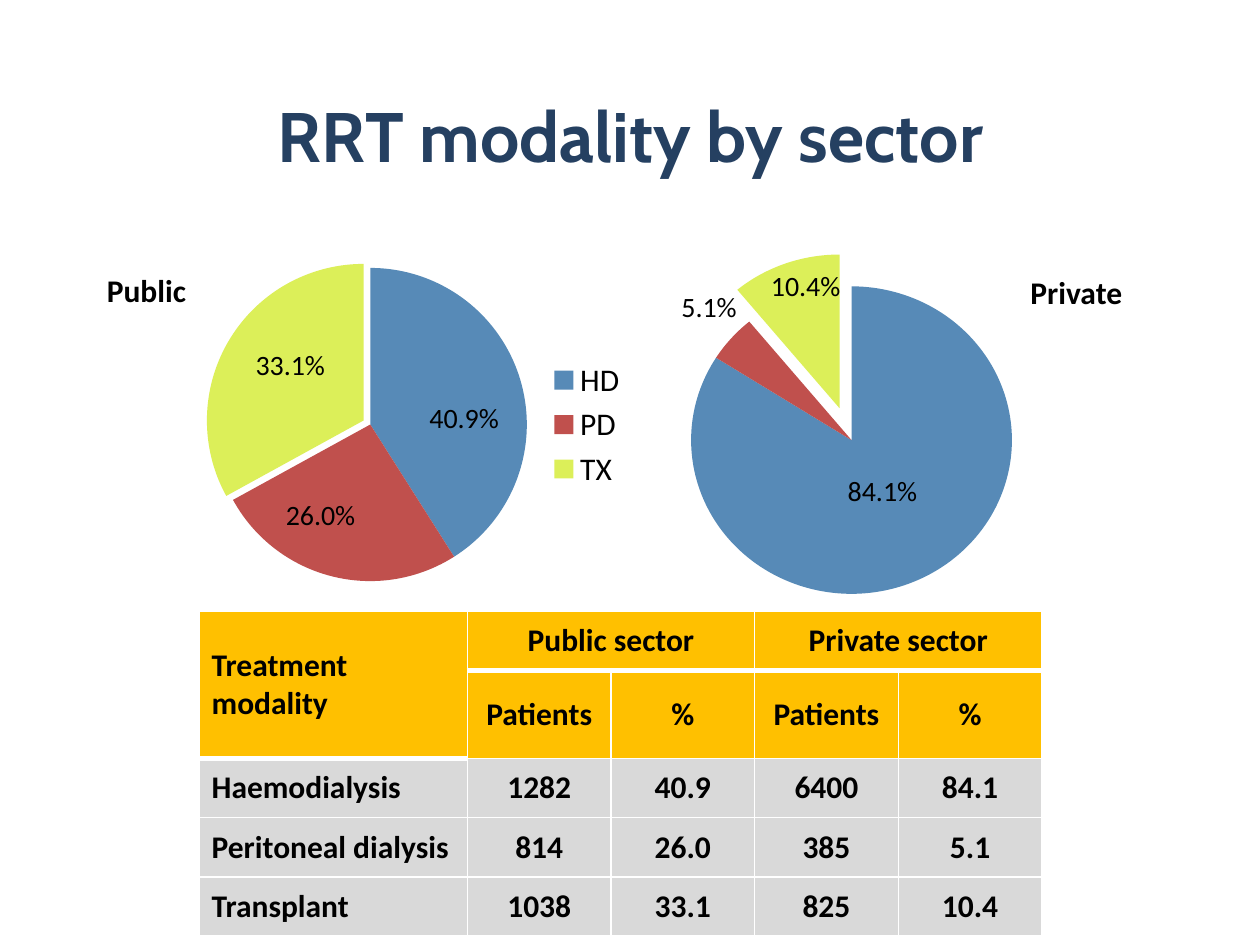
from lxml.etree import SubElement
from pptx import Presentation
from pptx.chart.data import CategoryChartData
from pptx.dml.color import RGBColor
from pptx.enum.chart import XL_CHART_TYPE as ChartType, XL_LEGEND_POSITION as LegendPosition
from pptx.enum.text import MSO_ANCHOR as Anchor, PP_ALIGN as Align
from pptx.oxml import parse_xml
from pptx.oxml.ns import nsdecls, qn
from pptx.util import Inches, Pt

TITLE = "RRT modality by sector"
MODALITIES = ["HD", "PD", "TX"]
SLICE_COLOURS = ["578AB7", "C0504D", "DCEF59"]
PIES = [
    dict(categories=MODALITIES, values=[41, 26, 33], place=(1.54, 1.15, 3.54, 4.44),
         plot=(0.04, 0.22, 0.71, 0.56), explosion=5, legend=True),
    dict(categories=["1", "2", "3"], values=[84, 5, 11], place=(5.16, 2.02, 3.23, 2.83),
         plot=(0.1, 0.05, 0.79, 0.9), explosion=22, legend=False),
]
SECTOR_LABELS = [("Public", 0.75, 2.1, 0.83), ("Private", 8.08, 2.12, 0.94)]
SHARE_LABELS = [
    ("33.1%", 1.93, 2.71, 0.76), ("40.9%", 3.31, 3.13, 0.76), ("26.0%", 2.17, 3.9, 0.76),
    ("10.4%", 6.02, 2.08, 0.76), ("84.1%", 6.63, 3.71, 0.76), ("5.1%", 5.31, 2.25, 0.65),
]
TABLE = [
    ["Treatment modality", "Public sector", "", "Private sector", ""],
    ["", "Patients", "%", "Patients", "%"],
    ["Haemodialysis", "1282", "40.9", "6400", "84.1"],
    ["Peritoneal dialysis", "814", "26.0", "385", "5.1"],
    ["Transplant", "1038", "33.1", "825", "10.4"],
]
MERGES = [((0, 0), (1, 0)), ((0, 1), (0, 2)), ((0, 3), (0, 4))]
HEADER_ROWS = 2
COLUMN_WIDTHS = [2.13] + [1.14] * 4
ROW_HEIGHT = 0.47


def colour(value):
    return RGBColor.from_string(value)


def paint(shape_format, value):
    shape_format.fill.solid()
    shape_format.fill.fore_color.rgb = colour(value)


def write(frame, text, size=18, font="Calibri", ink="000000", bold=False, align=Align.LEFT):
    para = frame.paragraphs[0]
    para.alignment = align
    span = para.add_run()
    span.text = text
    span.font.size = Pt(size)
    span.font.name = font
    span.font.bold = bold
    span.font.color.rgb = colour(ink)


def add_text(page, text, place, wrap=False, anchor=Anchor.TOP, **style):
    box = page.shapes.add_textbox(*map(Inches, place))
    box.text_frame.word_wrap = wrap
    box.text_frame.vertical_anchor = anchor
    write(box.text_frame, text, **style)


def place_plot(chart, shares):
    plot_area = chart.plots[0]._element.getparent()
    for old in plot_area.findall(qn("c:layout")):
        plot_area.remove(old)
    layout = parse_xml(f"<c:layout {nsdecls('c')}/>")
    manual = SubElement(layout, qn("c:manualLayout"))
    settings = [("layoutTarget", "inner"), ("xMode", "edge"), ("yMode", "edge")]
    settings += zip("xywh", shares)
    for name, value in settings:
        SubElement(manual, qn(f"c:{name}")).set("val", str(value))
    plot_area.insert(0, layout)


def add_pie(page, categories, values, place, plot, explosion, legend):
    data = CategoryChartData()
    data.categories = categories
    data.add_series("Series 1", values)
    chart = page.shapes.add_chart(ChartType.PIE, *map(Inches, place), data).chart
    chart.has_title = False
    chart.font.name = "Calibri"
    chart.font.size = Pt(18)
    chart.font.color.rgb = colour("000000")
    chart.has_legend = legend
    if legend:
        chart.legend.position = LegendPosition.RIGHT
        chart.legend.include_in_layout = False
    pie = chart.plots[0]
    pie.vary_by_categories = True
    series = pie.series[0]
    for index, fill in enumerate(SLICE_COLOURS):
        paint(series.points[index].format, fill)
    last_slice = series._element.findall(qn("c:dPt"))[-1]
    offset = parse_xml(f'<c:explosion {nsdecls("c")} val="{explosion}"/>')
    last_slice.find(qn("c:spPr")).addprevious(offset)
    place_plot(chart, plot)


def border(cell, **widths):
    properties = cell._tc.get_or_add_tcPr()
    for index, (side, width) in enumerate(widths.items()):
        line = parse_xml(
            f'<a:ln{side} {nsdecls("a")} w="{Pt(width)}"><a:solidFill>'
            f'<a:srgbClr val="FFFFFF"/></a:solidFill></a:ln{side}>')
        properties.insert(index, line)


def add_sector_table(page):
    frame = page.shapes.add_table(
        len(TABLE), len(COLUMN_WIDTHS), Inches(1.58), Inches(4.85),
        Inches(sum(COLUMN_WIDTHS)), Inches(ROW_HEIGHT * len(TABLE)))
    table = frame.table
    for column, width in zip(table.columns, COLUMN_WIDTHS):
        column.width = Inches(width)
    for row in table.rows:
        row.height = Inches(ROW_HEIGHT)
    for first, last in MERGES:
        table.cell(*first).merge(table.cell(*last))
    for r, texts in enumerate(TABLE):
        for c, text in enumerate(texts):
            cell = table.cell(r, c)
            cell.vertical_anchor = Anchor.MIDDLE
            paint(cell, "FFC000" if r < HEADER_ROWS else "D9D9D9")
            border(cell, L=1, R=1, T=3 if r == 1 else 1, B=3 if r == 0 else 1)
            if text:
                write(cell.text_frame, text, bold=True, align=Align.CENTER if c else Align.LEFT)


def main():
    deck = Presentation()
    deck.slide_width, deck.slide_height = Inches(10), Inches(7.5)
    page = deck.slides.add_slide(deck.slide_layouts[6])
    add_text(page, TITLE, (1.06, 0.44, 7.89, 1.25), wrap=True, anchor=Anchor.MIDDLE,
             size=40, font="Cabin", ink="254061", bold=True, align=Align.CENTER)
    add_pie(page, **PIES[0])
    add_sector_table(page)
    add_pie(page, **PIES[1])
    for text, left, top, width in SECTOR_LABELS:
        add_text(page, text, (left, top, width, 0.4), bold=True)
    for text, left, top, width in SHARE_LABELS:
        add_text(page, text, (left, top, width, 0.37), size=16)
    deck.save("out.pptx")


if __name__ == "__main__":
    main()
